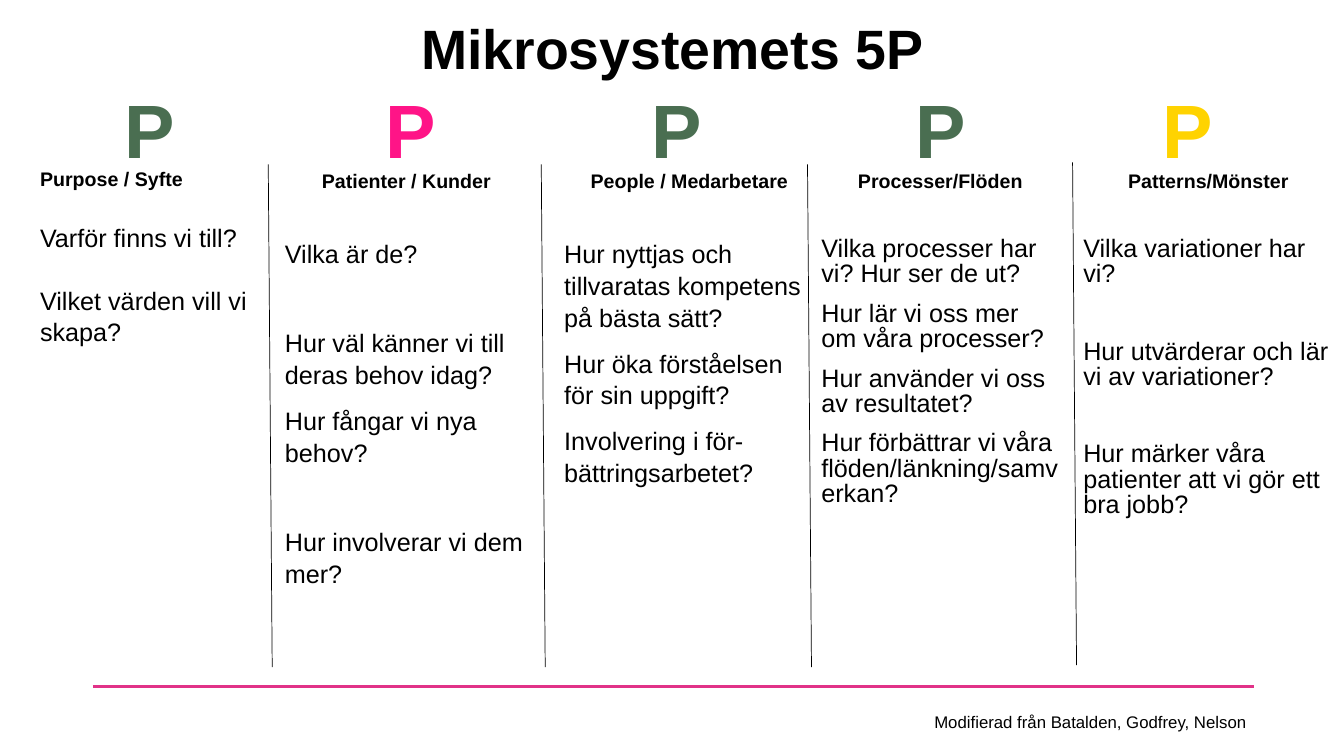
import pptx
import pptx.dml.color
import pptx.enum.shapes
import pptx.enum.text
import pptx.oxml.ns
import pptx.util
from lxml import etree
from pptx.util import Cm

ALIGN = pptx.enum.text.PP_ALIGN
BLACK, GREEN, PINK, YELLOW = "000000", "4A6E51", "FF1487", "FFD300"

COLUMNS = [
    dict(left=0.76, top=4.09, width=6.5, letter_left=2.87, color=GREEN,
         heading="Purpose / Syfte", align=ALIGN.LEFT, spacing=1.05,
         questions=[("Varför finns vi till?", 21.7),
                    ("Vilket värden vill vi skapa?", 21.7)]),
    dict(left=6.93, top=4.14, width=6.63, letter_left=9.45, color=PINK,
         heading="Patienter / Kunder", align=ALIGN.CENTER, spacing=1.05,
         questions=[("Vilka är de?", 31.7),
                    ("Hur väl känner vi till deras behov idag?", 41),
                    ("Hur fångar vi nya behov?", 10),
                    ("Hur involverar vi dem mer?", 41)]),
    dict(left=13.97, top=4.14, width=6.81, letter_left=16.15, color=GREEN,
         heading="People / Medarbetare", align=ALIGN.CENTER, spacing=1.05,
         questions=[("Hur nyttjas och tillvaratas kompetens på bästa sätt?", 31.7),
                    ("Hur öka förståelsen för sin uppgift?", 10),
                    ("Involvering i för-bättringsarbetet?", 10)]),
    dict(left=20.45, top=4.14, width=6.5, letter_left=22.81, color=GREEN,
         heading="Processer/Flöden", align=ALIGN.CENTER, spacing=0.84,
         questions=[("Vilka processer har vi? Hur ser de ut?", 31.7),
                    ("Hur lär vi oss mer om våra processer?", 10),
                    ("Hur använder vi oss av resultatet?", 10),
                    ("Hur förbättrar vi våra flöden/länkning/samverkan?", 10)]),
    dict(left=27.05, top=4.14, width=6.81, letter_left=29.03, color=YELLOW,
         heading="Patterns/Mönster", align=ALIGN.CENTER, spacing=0.84,
         questions=[("Vilka variationer har vi?", 31.7),
                    ("Hur utvärderar och lär vi av variationer?", 37),
                    ("Hur märker våra patienter att vi gör ett bra jobb?", 37)]),
]
DIVIDERS = [(6.76, 4.14), (13.64, 4.14), (20.35, 4.14), (27.03, 4.09)]


def rgb(value):
    return pptx.dml.color.RGBColor.from_string(value)


def add_frame(slide, left, top, width, height, wrap=True):
    box = slide.shapes.add_textbox(Cm(left), Cm(top), Cm(width), Cm(height))
    box.text_frame.word_wrap = wrap
    return box.text_frame


def write(frame, text, size=18, color=BLACK, bold=False, align=ALIGN.LEFT,
          before=0, spacing=1.0):
    paragraph = frame.paragraphs[0]
    if paragraph.runs:
        paragraph = frame.add_paragraph()
    paragraph.alignment = align
    paragraph.space_before = pptx.util.Pt(before)
    paragraph.line_spacing = spacing
    run = paragraph.add_run()
    run.text = text
    run.font.name = "Arial"
    run.font.size = pptx.util.Pt(size)
    run.font.bold = bold
    run.font.color.rgb = rgb(color)


def add_line(slide, start, end, color, width):
    line = slide.shapes.add_connector(
        pptx.enum.shapes.MSO_CONNECTOR.STRAIGHT,
        Cm(start[0]), Cm(start[1]), Cm(end[0]), Cm(end[1]))
    line.line.color.rgb = rgb(color)
    line.line.width = pptx.util.Pt(width)
    etree.SubElement(line._element.spPr, pptx.oxml.ns.qn("a:effectLst"))


def add_column(slide, column):
    letter = add_frame(slide, column["letter_left"], 1.96, 1.8, 2.57, wrap=False)
    write(letter, "P", size=54, color=column["color"], bold=True, align=ALIGN.CENTER)
    body = add_frame(slide, column["left"], column["top"], column["width"], 12.6)
    write(body, column["heading"], size=14, bold=True, align=column["align"])
    for question, before in column["questions"]:
        write(body, question, before=before, spacing=column["spacing"])


def main():
    deck = pptx.Presentation()
    deck.slide_width, deck.slide_height = Cm(33.87), Cm(19.05)
    slide = deck.slides.add_slide(deck.slide_layouts[6])

    add_line(slide, (2.34, 17.3), (31.6, 17.3), "E13288", 1.5)
    title = add_frame(slide, 2.34, 0.15, 29.21, 2.08)
    title.vertical_anchor = pptx.enum.text.MSO_ANCHOR.MIDDLE
    write(title, "Mikrosystemets 5P", size=39.6, bold=True, align=ALIGN.CENTER)

    for column in COLUMNS:
        add_column(slide, column)
    for left, top in DIVIDERS:
        add_line(slide, (left, top), (left + 0.1, top + 12.67), BLACK, 0.5)

    credit = add_frame(slide, 12.67, 17.81, 19, 0.76)
    write(credit, "Modifierad från Batalden, Godfrey, Nelson", size=12, align=ALIGN.RIGHT)
    deck.save("out.pptx")


if __name__ == "__main__":
    main()
